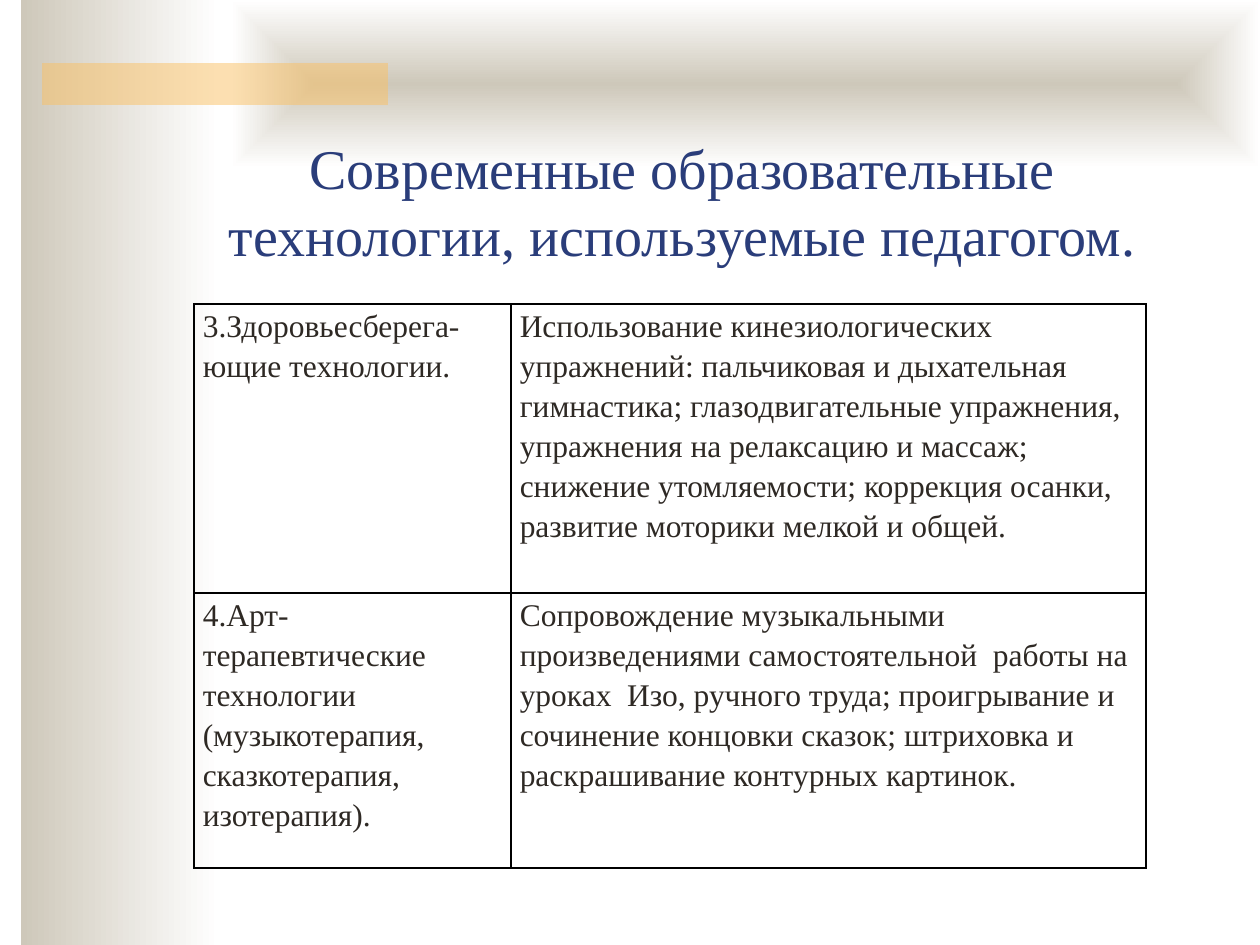
from dataclasses import dataclass

from lxml import etree
from pptx import Presentation
from pptx import util as u
from pptx.dml.color import RGBColor
from pptx.enum import shapes, text
from pptx.oxml import parse_xml
from pptx.oxml.ns import nsdecls, qn

PX = u.Inches(1) / 126


@dataclass(frozen=True)
class Theme:
    font: str = "Times New Roman"
    title_size: int = 32
    body_size: int = 18
    title: str = "2A3D7A"
    body: str = "2E2924"
    sand: str = "CEC8BA"
    white: str = "FFFFFF"
    accent: str = "FAC164"
    border: str = "000000"


THEME = Theme()
TITLE = "Современные образовательные технологии, используемые педагогом."
COLUMN_WIDTHS = (317, 635)
ROW_HEIGHTS = (289, 275)
TECHNOLOGIES = (
    ("3.Здоровьесберега-\nющие технологии.",
     "Использование кинезиологических упражнений: пальчиковая и дыхательная "
     "гимнастика; глазодвигательные упражнения, упражнения на релаксацию и массаж; "
     "снижение утомляемости; коррекция осанки, развитие моторики мелкой и общей."),
    ("4.Арт-терапевтические технологии (музыкотерапия, сказкотерапия, изотерапия).",
     "Сопровождение музыкальными произведениями самостоятельной  работы на уроках  "
     "Изо, ручного труда; проигрывание и сочинение концовки сказок; штриховка и "
     "раскрашивание контурных картинок."),
)


def px(*lengths):
    return [round(length * PX) for length in lengths]


def style_font(font, size, color):
    font.name = THEME.font
    font.size = u.Pt(size)
    font.color.rgb = RGBColor.from_string(color)


def add_panel(slide, *box):
    panel = slide.shapes.add_shape(shapes.MSO_SHAPE.RECTANGLE, *px(*box))
    panel.shadow.inherit = False
    panel.line.fill.background()
    return panel


def add_gradient_panel(slide, *box, from_center=False):
    """Fade from sand to white, rightwards or from the centre outwards."""
    panel = add_panel(slide, *box)
    panel.fill.gradient()
    panel.fill.gradient_angle = 0
    for stop, color in zip(panel.fill.gradient_stops, (THEME.sand, THEME.white)):
        stop.color.rgb = RGBColor.from_string(color)
    if from_center:
        linear = panel._element.spPr.find(".//" + qn("a:lin"))
        linear.getparent().replace(linear, parse_xml(
            f'<a:path {nsdecls("a")} path="rect">'
            '<a:fillToRect l="50000" t="50000" r="50000" b="50000"/></a:path>'))


def add_accent_bar(slide, *box):
    bar = add_panel(slide, *box)
    bar.fill.solid()
    bar.fill.fore_color.rgb = RGBColor.from_string(THEME.accent)
    color = bar._element.spPr.find(qn("a:solidFill"))[0]
    etree.SubElement(color, qn("a:alpha"), val="50000")


def place_title(slide, *box):
    title = slide.shapes.title
    slide.shapes._spTree.append(title._element)  # in front of the panels
    title.left, title.top, title.width, title.height = px(*box)
    frame = title.text_frame
    frame.text = TITLE
    frame.word_wrap = True
    frame.auto_size = text.MSO_AUTO_SIZE.NONE
    frame.vertical_anchor = text.MSO_ANCHOR.BOTTOM
    heading = frame.paragraphs[0]
    heading.alignment = text.PP_ALIGN.CENTER
    style_font(heading.runs[0].font, THEME.title_size, THEME.title)


def set_borders(cell):
    properties = cell._tc.get_or_add_tcPr()
    for index, side in enumerate("LRTB"):
        properties.insert(index, parse_xml(
            f'<a:ln{side} {nsdecls("a")} w="{u.Pt(1)}"><a:solidFill>'
            f'<a:srgbClr val="{THEME.border}"/></a:solidFill></a:ln{side}>'))


def fill_cell(cell, content):
    cell.fill.background()
    cell.margin_left = cell.margin_right = u.Inches(0.07)
    cell.margin_top = cell.margin_bottom = 0
    cell.text_frame.text = content
    for paragraph in cell.text_frame.paragraphs:
        paragraph.line_spacing = 1.15
        for run in paragraph.runs:
            style_font(run.font, THEME.body_size, THEME.body)
    set_borders(cell)


def add_technology_table(slide, left, top):
    box = px(left, top, sum(COLUMN_WIDTHS), sum(ROW_HEIGHTS))
    table = slide.shapes.add_table(len(ROW_HEIGHTS), len(COLUMN_WIDTHS), *box).table
    table.first_row = table.horz_banding = False
    for column, width in zip(table.columns, px(*COLUMN_WIDTHS)):
        column.width = width
    for row, height, contents in zip(table.rows, px(*ROW_HEIGHTS), TECHNOLOGIES):
        row.height = height
        for cell, content in zip(row.cells, contents):
            fill_cell(cell, content)


def main():
    deck = Presentation()
    deck.slide_width, deck.slide_height = px(1260, 945)
    slide = deck.slides.add_slide(deck.slide_layouts[5])
    add_gradient_panel(slide, 21, 0, 199, 945)
    add_gradient_panel(slide, 231, 0, 1029, 168, from_center=True)
    add_accent_bar(slide, 42, 63, 346, 42)
    place_title(slide, 147, 116, 1071, 158)
    add_technology_table(slide, 194, 304)
    deck.save("out.pptx")


if __name__ == "__main__":
    main()
